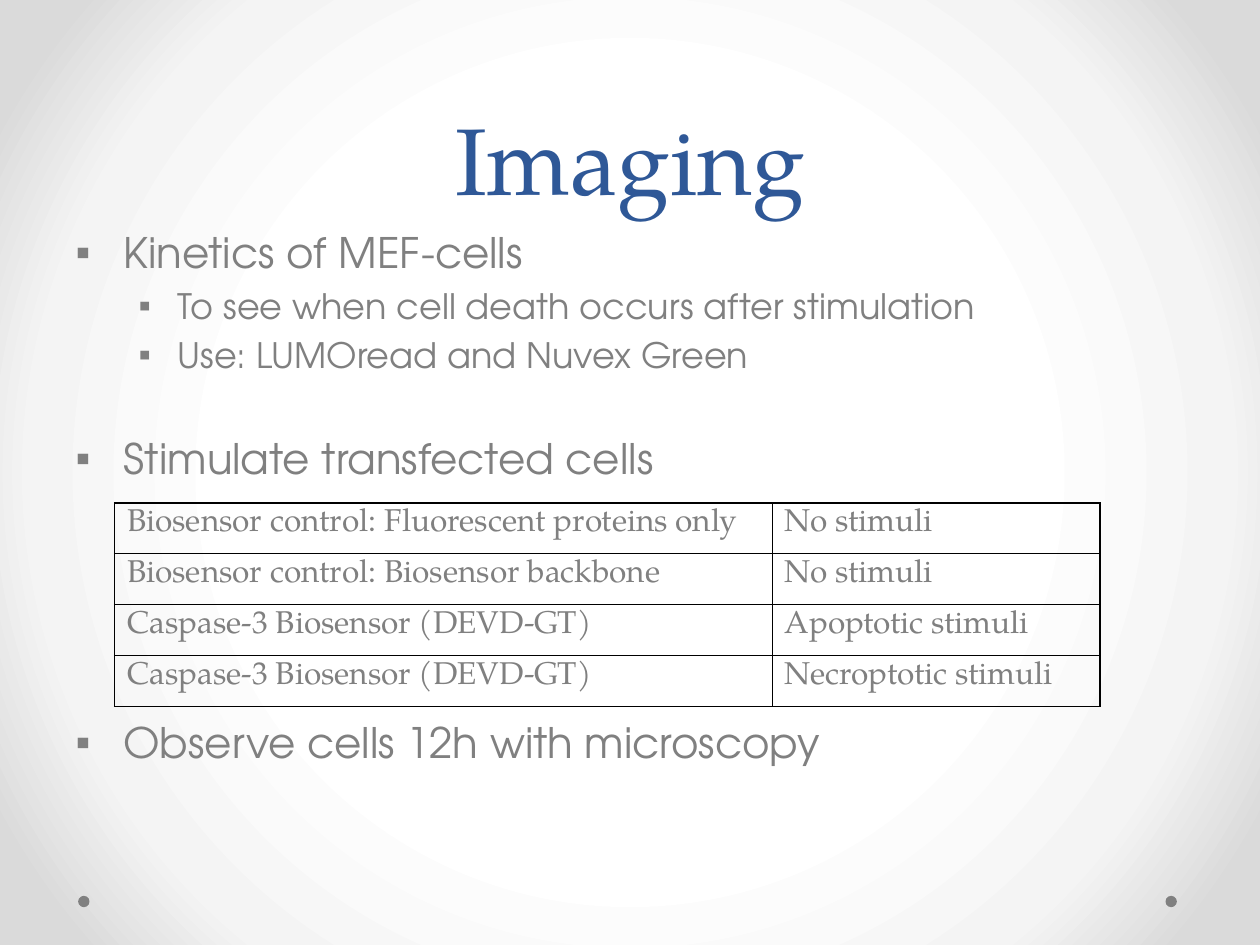
from dataclasses import dataclass

from lxml import etree
from pptx import Presentation
from pptx.dml.color import RGBColor
from pptx.enum.shapes import MSO_SHAPE
from pptx.enum.text import MSO_ANCHOR, MSO_AUTO_SIZE, PP_ALIGN
from pptx.oxml import parse_xml
from pptx.oxml.ns import qn
from pptx.util import Inches, Pt

ELLIPSE = MSO_SHAPE.OVAL
BOTTOM, TOP = MSO_ANCHOR.BOTTOM, MSO_ANCHOR.TOP
CENTER, LEFT = PP_ALIGN.CENTER, PP_ALIGN.LEFT
NO_AUTOFIT = MSO_AUTO_SIZE.NONE
DRAWING_NS = "http://schemas.openxmlformats.org/drawingml/2006/main"


@dataclass(frozen=True)
class Theme:
    """Colours, fonts and type sizes of the slide."""
    heading: str = "2F5897"
    text: str = "808080"
    border: str = "000000"
    backdrop: tuple = ((50, "FFFFFF"), (76, "F4F4F4"), (92, "DADADA"))
    serif: str = "TeX Gyre Pagella"
    sans: str = "TeX Gyre Adventor"
    title_size: int = 54
    level_sizes: tuple = (24, 20)
    table_size: int = 18


THEME = Theme()
LEVEL_INDENTS = ((0.38, -0.38), (0.81, -0.31))
POINTS = (
    (0, "Kinetics of MEF-cells", 4.8),
    (1, "To see when cell death occurs after stimulation", 4),
    (1, "Use: LUMOread and Nuvex Green", 4),
    (0, "Stimulate transfected cells", 32.8),
    (0, "Observe cells 12h with microscopy", 133.5),
)
STIMULI = (
    ("Biosensor control: Fluorescent proteins only", "No stimuli"),
    ("Biosensor control: Biosensor backbone", "No stimuli"),
    ("Caspase-3 Biosensor (DEVD-GT)", "Apoptotic stimuli"),
    ("Caspase-3 Biosensor (DEVD-GT)", "Necroptotic stimuli"),
)


def write(paragraph, text, *, size, font, color=THEME.text, align=LEFT,
          before=0, line=None):
    """Write formatted text into a paragraph."""
    run = paragraph.add_run()
    run.text = text
    run.font.size = Pt(size)
    run.font.name = font
    run.font.color.rgb = RGBColor.from_string(color)
    paragraph.alignment = align
    paragraph.space_before = Pt(before)
    if line:
        paragraph.line_spacing = Pt(line)


def place(shape, box):
    """Move a shape to a box of left, top, width and height in inches."""
    shape.left, shape.top, shape.width, shape.height = map(Inches, box)


def set_bullet(paragraph, level):
    """Give a paragraph the square bullet and indent of its level."""
    paragraph.level = level
    margin, indent = LEVEL_INDENTS[level]
    properties = paragraph._p.get_or_add_pPr()
    properties.set("marL", str(Inches(margin)))
    properties.set("indent", str(Inches(indent)))
    etree.SubElement(properties, qn("a:buChar"), char="▪")


def paint_background(slide):
    """Fill the background with a radial gradient."""
    slide.background.fill.gradient()
    linear = next(slide._element.iter(qn("a:gradFill")))
    stops = "".join(
        f'<a:gs pos="{position * 1000}"><a:srgbClr val="{color}"/></a:gs>'
        for position, color in THEME.backdrop)
    radial = parse_xml(
        f'<a:gradFill xmlns:a="{DRAWING_NS}" rotWithShape="1">'
        f'<a:gsLst>{stops}</a:gsLst><a:path path="circle">'
        '<a:fillToRect l="50000" t="50000" r="50000" b="50000"/>'
        '</a:path></a:gradFill>')
    linear.getparent().replace(linear, radial)


def add_corner_dots(slide, box):
    """Put a small dot at each end of the given strip."""
    left, top, width, diameter = box
    for dot_left in (left, left + width - diameter):
        dot = slide.shapes.add_shape(
            ELLIPSE, *map(Inches, (dot_left, top, diameter, diameter)))
        dot.shadow.inherit = False
        dot.fill.solid()
        dot.fill.fore_color.rgb = RGBColor.from_string(THEME.text)
        dot.line.fill.background()


def fill_title(slide, box):
    """Set the slide title at the foot of its box."""
    title = slide.shapes.title
    place(title, box)
    frame = title.text_frame
    frame.auto_size = NO_AUTOFIT
    frame.vertical_anchor = BOTTOM
    write(frame.paragraphs[0], "Imaging", size=THEME.title_size,
          font=THEME.serif, color=THEME.heading, align=CENTER, line=58)


def fill_points(slide, box):
    """Set the bulleted steps, leaving room for the table."""
    body = slide.placeholders[1]
    place(body, box)
    frame = body.text_frame
    frame.auto_size = NO_AUTOFIT
    frame.vertical_anchor = TOP
    for index, (level, text, before) in enumerate(POINTS):
        point = frame.add_paragraph() if index else frame.paragraphs[0]
        write(point, text, size=THEME.level_sizes[level], font=THEME.sans,
              before=before)
        set_bullet(point, level)


def draw_borders(cell):
    """Draw a thin line on every side of a cell."""
    properties = cell._tc.get_or_add_tcPr()
    for side in ("lnL", "lnR", "lnT", "lnB"):
        properties.append(parse_xml(
            f'<a:{side} xmlns:a="{DRAWING_NS}" w="{Pt(1)}"><a:solidFill>'
            f'<a:srgbClr val="{THEME.border}"/></a:solidFill></a:{side}>'))


def add_stimuli_table(slide, box):
    """Add the table of biosensors and their stimuli."""
    left, top, width, height = box
    table = slide.shapes.add_table(
        len(STIMULI), 2, *map(Inches, box)).table
    table.first_row = table.horz_banding = False
    biosensor_width = 5.22
    table.columns[0].width = Inches(biosensor_width)
    table.columns[1].width = Inches(width - biosensor_width)
    for row, texts in enumerate(STIMULI):
        table.rows[row].height = Inches(height / len(STIMULI))
        for column, text in enumerate(texts):
            cell = table.cell(row, column)
            draw_borders(cell)
            cell.fill.background()
            write(cell.text_frame.paragraphs[0], text,
                  size=THEME.table_size, font=THEME.serif)


def main():
    """Build the slide and save it."""
    deck = Presentation()
    deck.slide_width, deck.slide_height = Inches(10), Inches(7.5)
    slide = deck.slides.add_slide(deck.slide_layouts[1])
    paint_background(slide)
    add_corner_dots(slide, (0.62, 7.11, 8.72, 0.09))
    fill_title(slide, (0.5, 0, 9, 1.75))
    fill_points(slide, (0.5, 1.75, 9, 4.95))
    add_stimuli_table(slide, (0.91, 3.99, 7.82, 1.62))
    deck.save("out.pptx")


if __name__ == "__main__":
    main()
